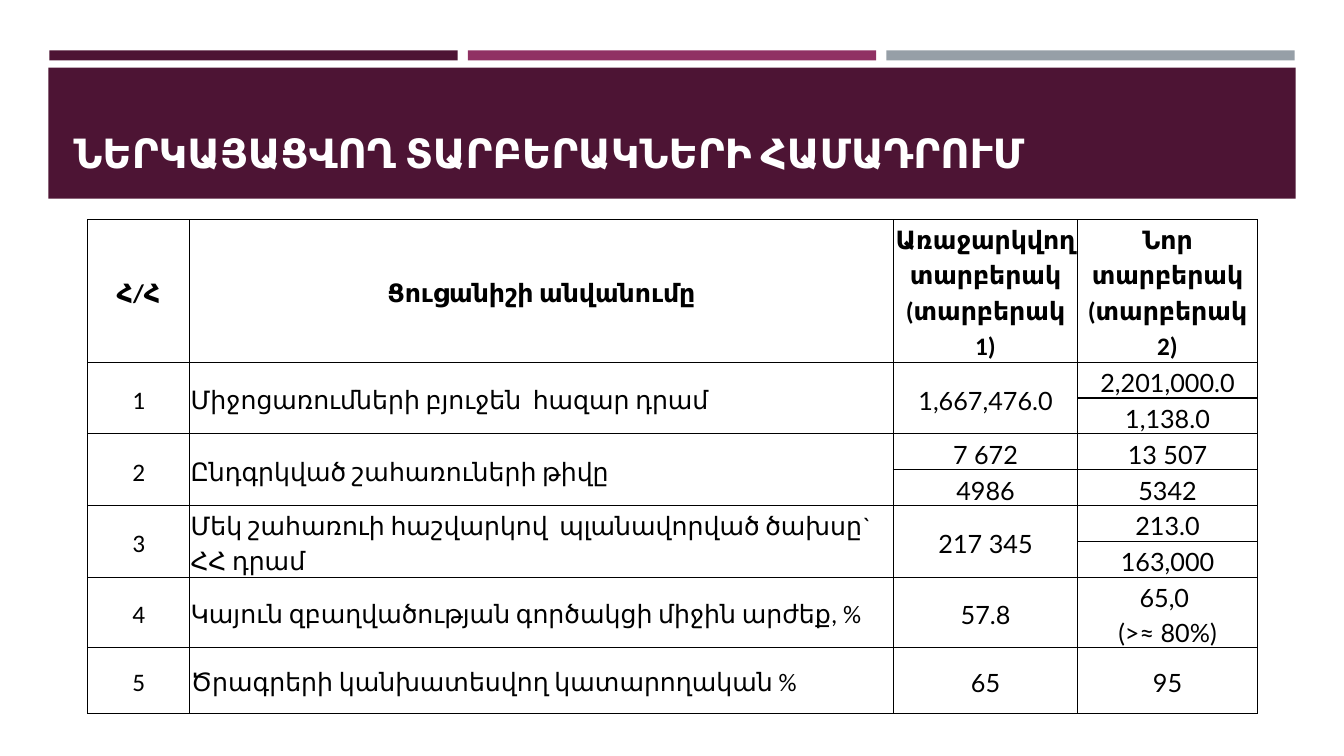
from lxml.etree import SubElement
from pptx import Presentation
from pptx.dml.color import RGBColor
from pptx.enum.shapes import MSO_SHAPE
from pptx.enum.text import MSO_ANCHOR, PP_ALIGN
from pptx.oxml.ns import qn
from pptx.util import Inches, Pt

COLORS = {
    "plum": "4D1434",
    "berry": "903163",
    "gray": "969FA7",
    "white": "FFFFFF",
    "black": "000000",
}

COLUMN_WIDTHS = [1.01, 6.98, 1.83, 1.78]
ROW_HEIGHTS = [0.98, 0.3, 0.3, 0.3, 0.3, 0.35, 0.35, 0.65, 0.65]
HEADERS = [
    "Հ/Հ",
    "Ցուցանիշի անվանումը",
    "Առաջարկվող տարբերակ (տարբերակ 1)",
    "Նոր տարբերակ (տարբերակ 2)",
]
# Indicator, values of variant 1, values of variant 2
INDICATORS = [
    ("Միջոցառումների բյուջեն  հազար դրամ", ["1,667,476.0"], ["2,201,000.0", "1,138.0"]),
    ("Ընդգրկված շահառուների թիվը", ["7 672", "4986"], ["13 507", "5342"]),
    ("Մեկ շահառուի հաշվարկով  պլանավորված ծախսը`  ՀՀ դրամ", ["217 345"], ["213.0", "163,000"]),
    ("Կայուն զբաղվածության գործակցի միջին արժեք, %", ["57.8"], ["65,0 \v(>≈ 80%)"]),
    ("Ծրագրերի կանխատեսվող կատարողական %", ["65"], ["95"]),
]


def rgb(name):
    return RGBColor.from_string(COLORS[name])


def write_text(frame, text, size=18, font="Calibri", color="black", bold=False,
               align=PP_ALIGN.CENTER, line_spacing=None, after=0):
    """Write one formatted paragraph into a text frame."""
    para = frame.paragraphs[0]
    para.text = text
    para.alignment = align
    para.space_after = Pt(after)
    if line_spacing:
        para.line_spacing = line_spacing
    for span in para.runs:
        span.font.size = Pt(size)
        span.font.name = font
        span.font.bold = bold
        span.font.color.rgb = rgb(color)


def add_band(page, left, top, width, height, color):
    band = page.shapes.add_shape(MSO_SHAPE.RECTANGLE, Inches(left), Inches(top),
                                 Inches(width), Inches(height))
    band.shadow.inherit = False
    band.fill.solid()
    band.fill.fore_color.rgb = rgb(color)
    band.line.fill.background()


def add_header(page, left, top, width, height):
    """Three thin strips above a title band."""
    strip, gap = 4.05, 0.1
    for index, color in enumerate(["plum", "berry", "gray"]):
        add_band(page, left + 0.01 + index * (strip + gap), top, strip, 0.1, color)
    add_band(page, left, top + 0.17, width, height - 0.17, "plum")

    # Title, brought in front of the band
    title = page.shapes.title
    title.left, title.top = Inches(left + 0.15), Inches(top + 0.4)
    title.width, title.height = Inches(10), Inches(0.9)
    frame = title.text_frame
    frame.word_wrap = True
    frame.vertical_anchor = MSO_ANCHOR.BOTTOM
    write_text(frame, "ՆԵՐԿԱՅԱՑՎՈՂ ՏԱՐԲԵՐԱԿՆԵՐԻ ՀԱՄԱԴՐՈՒՄ", size=28.8,
               color="white", bold=True, align=PP_ALIGN.LEFT)
    title.element.getparent().append(title.element)


def style_cell(cell):
    """Tight margins, no fill, thin black borders."""
    cell.margin_left = cell.margin_right = cell.margin_top = Inches(0.01)
    cell.margin_bottom = 0
    cell.vertical_anchor = MSO_ANCHOR.MIDDLE
    properties = cell._tc.get_or_add_tcPr()
    for side in ("a:lnL", "a:lnR", "a:lnT", "a:lnB"):
        border = SubElement(properties, qn(side), w=str(Pt(1)))
        fill = SubElement(border, qn("a:solidFill"))
        SubElement(fill, qn("a:srgbClr"), val=COLORS["black"])
    cell.fill.background()


def fill_column(table, column, row, span, values, **text_format):
    """Share the rows of one indicator among the values of a column."""
    if len(values) < span:
        table.cell(row, column).merge(table.cell(row + span - 1, column))
    for offset, value in enumerate(values):
        write_text(table.cell(row + offset, column).text_frame, value,
                   line_spacing=1.15, after=0 if column == 2 else 10, **text_format)


def add_indicator_table(page, left, top):
    frame = page.shapes.add_table(len(ROW_HEIGHTS), len(COLUMN_WIDTHS), Inches(left), Inches(top),
                                  Inches(sum(COLUMN_WIDTHS)), Inches(sum(ROW_HEIGHTS)))
    table = frame.table
    table.first_row = table.horz_banding = False
    for column, width in zip(table.columns, COLUMN_WIDTHS):
        column.width = Inches(width)
    for row, height in zip(table.rows, ROW_HEIGHTS):
        row.height = Inches(height)
    for cell in table.iter_cells():
        style_cell(cell)

    for column, header in enumerate(HEADERS):
        fill_column(table, column, 0, 1, [header], bold=True)

    row = 1
    for number, (name, first, second) in enumerate(INDICATORS, start=1):
        span = len(second)
        fill_column(table, 0, row, span, [str(number)])
        fill_column(table, 1, row, span, [name], align=PP_ALIGN.LEFT)
        fill_column(table, 2, row, span, first, font="Lato")
        fill_column(table, 3, row, span, second, font="Lato")
        row += span


def main():
    deck = Presentation()
    deck.slide_width, deck.slide_height = Inches(13.33), Inches(7.5)
    page = deck.slides.add_slide(deck.slide_layouts[5])
    add_header(page, 0.48, 0.5, 12.37, 1.47)
    add_indicator_table(page, 0.87, 2.18)
    deck.save("out.pptx")


if __name__ == "__main__":
    main()
